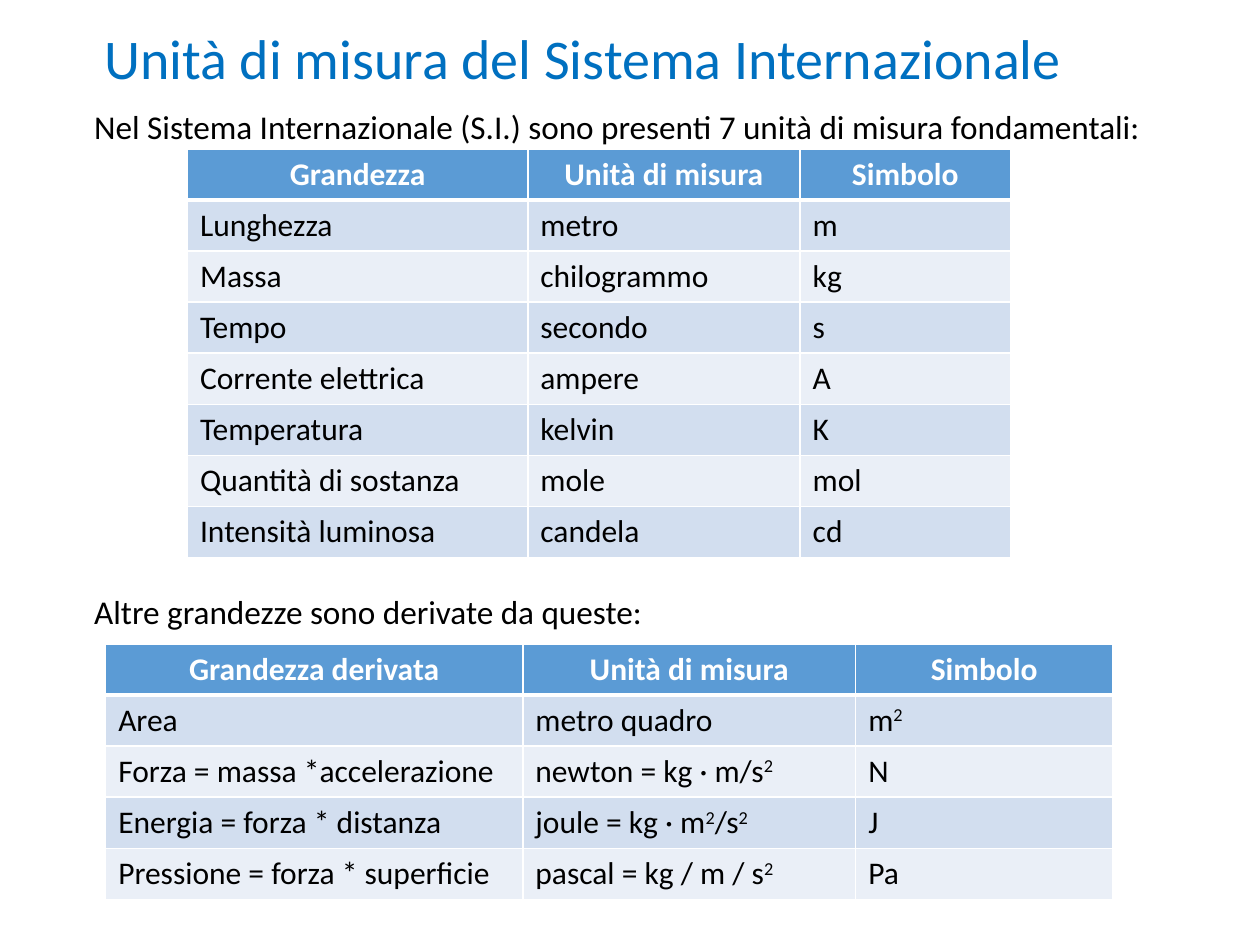
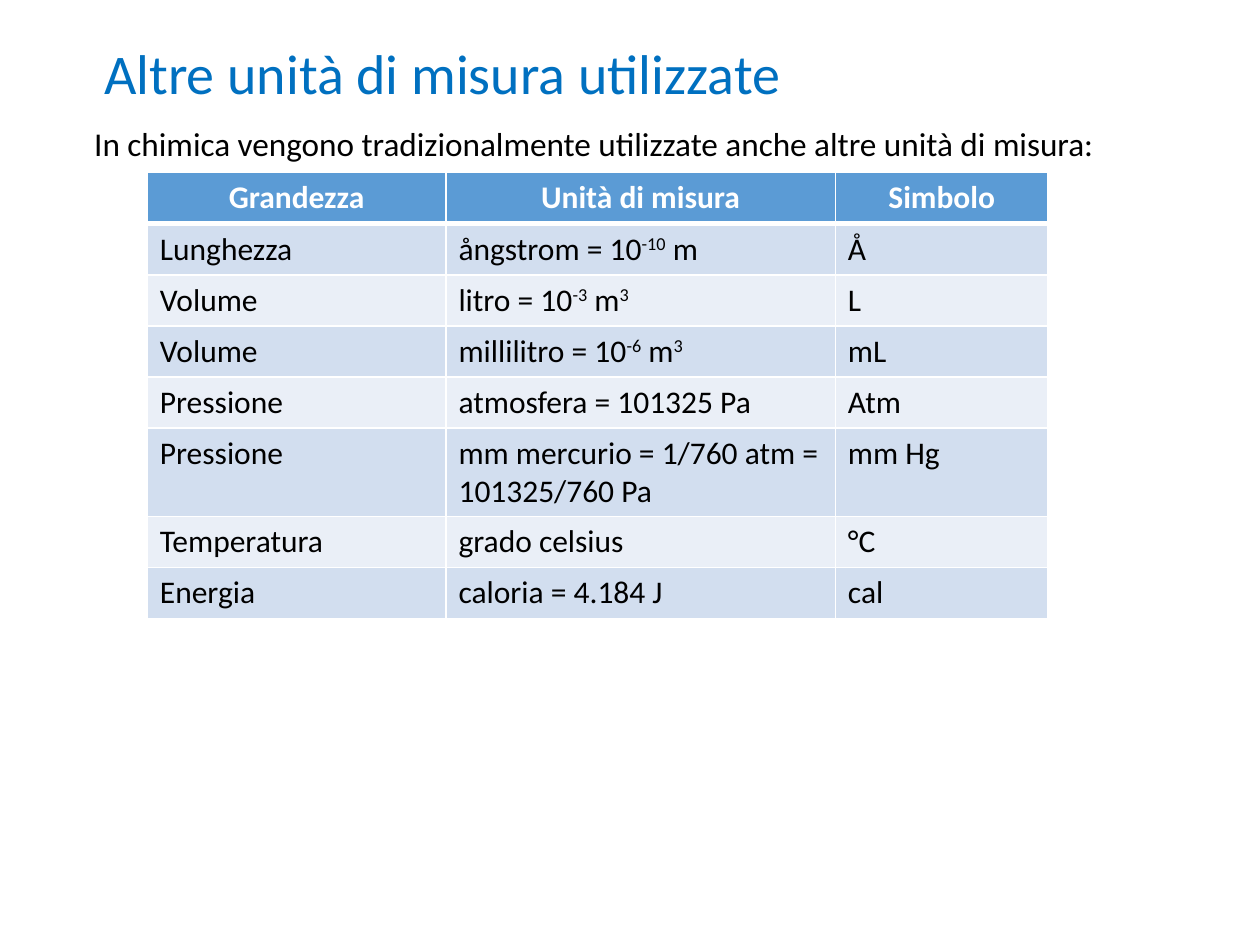
from dataclasses import dataclass

from lxml.etree import SubElement
from pptx import Presentation
from pptx.dml.color import RGBColor
from pptx.enum.text import MSO_ANCHOR, PP_ALIGN
from pptx.oxml.ns import qn
from pptx.util import Cm, Pt

COLORS = {
    "title": "0070C0",
    "text": "000000",
    "header": "5B9BD5",
    "odd_row": "D2DEEF",
    "even_row": "EAEFF7",
    "white": "FFFFFF",
}
FONT = "Calibri"
ROW_HEIGHT = 1.03
SUPERSCRIPT_MARK = "^"


@dataclass(frozen=True)
class UnitTable:
    """Places are in cm; text between two ^ marks is superscript."""
    left: float
    top: float
    widths: tuple[float, ...]
    rows: tuple[tuple[str, ...], ...]


@dataclass(frozen=True)
class Section:
    intro: str
    top: float
    height: float
    units: UnitTable


@dataclass(frozen=True)
class Page:
    title: str
    title_top: float
    sections: tuple[Section, ...]


BASE_UNITS = UnitTable(3.78, 3, (6.86, 5.49, 4.24), (
    ("Grandezza", "Unità di misura", "Simbolo"),
    ("Lunghezza", "metro", "m"),
    ("Massa", "chilogrammo", "kg"),
    ("Tempo", "secondo", "s"),
    ("Corrente elettrica", "ampere", "A"),
    ("Temperatura", "kelvin", "K"),
    ("Quantità di sostanza", "mole", "mol"),
    ("Intensità luminosa", "candela", "cd"),
))
DERIVED_UNITS = UnitTable(2.13, 12.98, (8.41, 6.71, 5.18), (
    ("Grandezza derivata", "Unità di misura", "Simbolo"),
    ("Area", "metro quadro", "m^2^"),
    ("Forza = massa *accelerazione", "newton = kg · m/s^2^", "N"),
    ("Energia = forza * distanza", "joule = kg · m^2^/s^2^", "J"),
    ("Pressione = forza * superficie", "pascal = kg / m / s^2^", "Pa"),
))
OTHER_UNITS = UnitTable(2.97, 3.48, (6.02, 7.85, 4.29), (
    ("Grandezza", "Unità di misura", "Simbolo"),
    ("Lunghezza", "ångstrom = 10^-10^ m", "Å"),
    ("Volume", "litro = 10^-3^ m^3^", "L"),
    ("Volume", "millilitro = 10^-6^ m^3^", "mL"),
    ("Pressione", "atmosfera = 101325 Pa", "Atm"),
    ("Pressione", "mm mercurio = 1/760 atm = 101325/760 Pa", "mm Hg"),
    ("Temperatura", "grado celsius", "°C"),
    ("Energia", "caloria = 4.184 J", "cal"),
))

PAGES = (
    Page("Unità di misura del Sistema Internazionale", 0.1, (
        Section("Nel Sistema Internazionale (S.I.) sono presenti 7 unità di misura fondamentali:",
                1.85, 8.05, BASE_UNITS),
        Section("Altre grandezze sono derivate da queste:", 11.63, 6.65, DERIVED_UNITS),
    )),
    Page("Altre unità di misura utilizzate", 0.41, (
        Section("In chimica vengono tradizionalmente utilizzate anche altre unità di misura:",
                2.21, 8.05, OTHER_UNITS),
    )),
)


def write(paragraph, text: str, size: float, color: str, bold: bool = False) -> None:
    for position, part in enumerate(text.split(SUPERSCRIPT_MARK)):
        if part:
            run = paragraph.add_run()
            run.text = part
            if position % 2:
                run._r.get_or_add_rPr().set("baseline", "30000")
    font = paragraph.font
    font.name, font.size, font.bold = FONT, Pt(size), bold
    font.color.rgb = RGBColor.from_string(COLORS[color])


def add_text_frame(slide, left: float, top: float, width: float, height: float):
    frame = slide.shapes.add_textbox(Cm(left), Cm(top), Cm(width), Cm(height)).text_frame
    frame.word_wrap = True
    return frame


def add_title(slide, text: str, top: float) -> None:
    frame = add_text_frame(slide, 1.85, top, 22.23, 2.26)
    frame.vertical_anchor = MSO_ANCHOR.MIDDLE
    heading = frame.paragraphs[0]
    heading.line_spacing = 0.9
    write(heading, text, 32, "title")


def add_intro(slide, section: Section) -> None:
    frame = add_text_frame(slide, 1.65, section.top, 21.95, section.height)
    intro = frame.paragraphs[0]
    intro.line_spacing = 1.2
    intro.space_after = Pt(6)
    write(intro, section.intro, 19, "text")


def add_borders(cell, row: int) -> None:
    """White 1 pt grid with a 3 pt rule under the header row."""
    widths = {"lnL": 1, "lnR": 1, "lnT": 3 if row == 1 else 1, "lnB": 3 if row == 0 else 1}
    properties = cell._tc.get_or_add_tcPr()
    for side, width in widths.items():
        line = SubElement(properties, qn(f"a:{side}"), w=str(Pt(width)))
        fill = SubElement(line, qn("a:solidFill"))
        SubElement(fill, qn("a:srgbClr"), val=COLORS["white"])


def add_unit_table(slide, units: UnitTable) -> None:
    row_count = len(units.rows)
    table = slide.shapes.add_table(
        row_count, len(units.widths), Cm(units.left), Cm(units.top),
        Cm(sum(units.widths)), Cm(ROW_HEIGHT * row_count)).table
    for column, width in zip(table.columns, units.widths):
        column.width = Cm(width)
    for row, values in enumerate(units.rows):
        table.rows[row].height = Cm(ROW_HEIGHT)
        is_header = row == 0
        background = "header" if is_header else "odd_row" if row % 2 else "even_row"
        for column, value in enumerate(values):
            cell = table.cell(row, column)
            add_borders(cell, row)
            cell.fill.solid()
            cell.fill.fore_color.rgb = RGBColor.from_string(COLORS[background])
            entry = cell.text_frame.paragraphs[0]
            entry.alignment = PP_ALIGN.CENTER if is_header else PP_ALIGN.LEFT
            write(entry, value, 18, "white" if is_header else "text", is_header)


def main() -> None:
    presentation = Presentation()
    presentation.slide_width, presentation.slide_height = Cm(25.4), Cm(19.05)
    blank_layout = presentation.slide_layouts[6]
    for page in PAGES:
        slide = presentation.slides.add_slide(blank_layout)
        add_title(slide, page.title, page.title_top)
        for section in page.sections:
            add_intro(slide, section)
            add_unit_table(slide, section.units)
    presentation.save("out.pptx")


if __name__ == "__main__":
    main()
